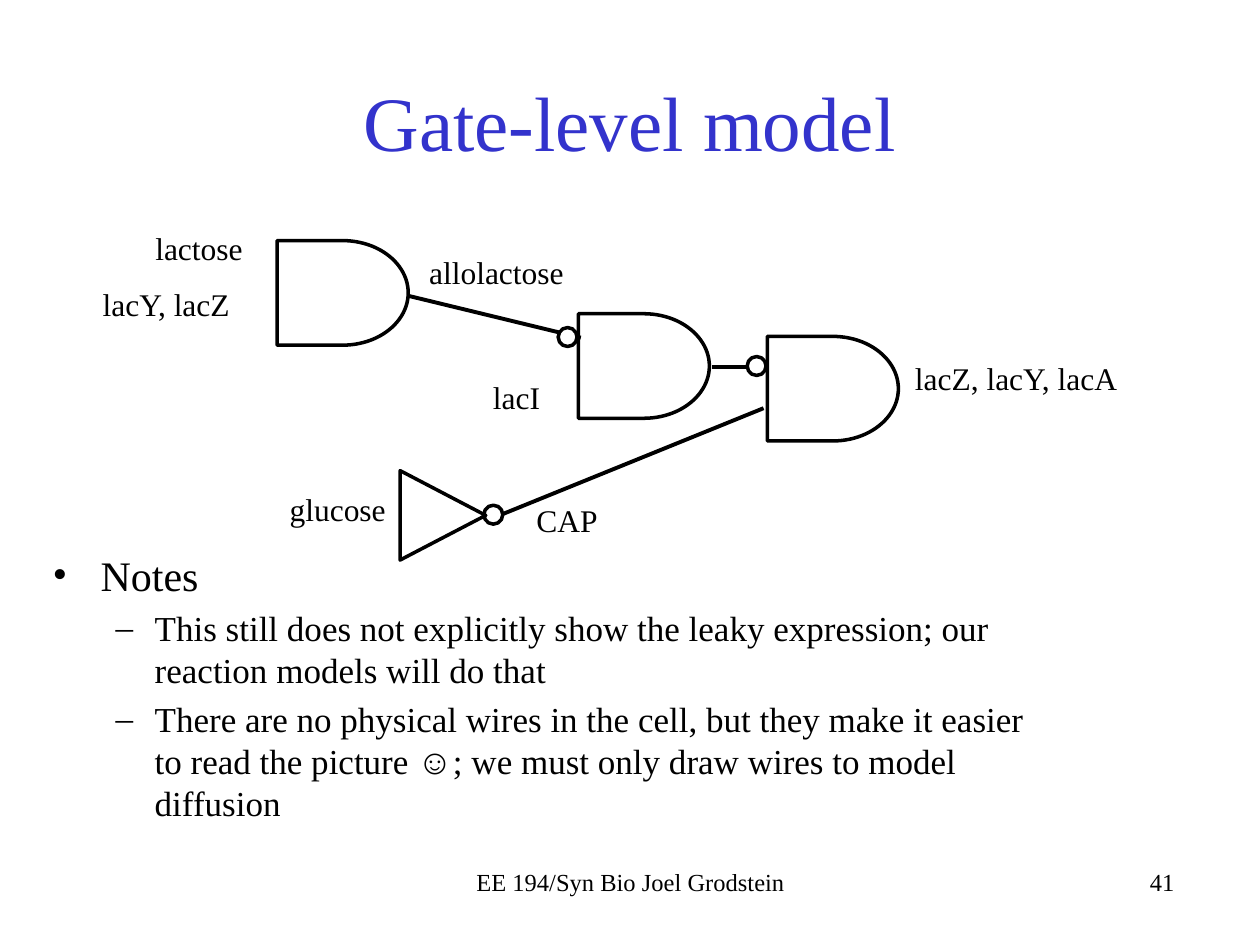
from pptx import Presentation
from pptx.dml.color import RGBColor
from pptx.enum.shapes import MSO_CONNECTOR as CONNECTOR, MSO_SHAPE as SHAPE
from pptx.enum.text import MSO_ANCHOR as ANCHOR, PP_ALIGN as ALIGN
from pptx.oxml.ns import qn
from pptx.util import Inches, Pt
from lxml import etree

FONT = "Times New Roman"
BLACK, WHITE, BLUE = "000000", "FFFFFF", "3333CC"
BUBBLE = 0.15
GATE_WIDTH, GATE_HEIGHT = 1.04, 0.83


def color(hex_string):
    return RGBColor.from_string(hex_string)


def write(paragraph, text, size=18, ink=BLACK, align=ALIGN.CENTER):
    paragraph.alignment = align
    run = paragraph.add_run()
    run.text = text
    run.font.name, run.font.size = FONT, Pt(size)
    run.font.color.rgb = color(ink)


def add_frame(slide, box, anchor=ANCHOR.TOP):
    frame = slide.shapes.add_textbox(*map(Inches, box)).text_frame
    frame.word_wrap = True
    frame.vertical_anchor = anchor
    return frame


def add_text(slide, box, text, anchor=ANCHOR.TOP, **style):
    write(add_frame(slide, box, anchor).paragraphs[0], text, **style)


def add_bullet(paragraph, mark, margin, hanging):
    properties = paragraph._p.get_or_add_pPr()
    properties.set("marL", str(Inches(margin)))
    properties.set("indent", str(-Inches(hanging)))
    etree.SubElement(properties, qn("a:buFont")).set("typeface", FONT)
    etree.SubElement(properties, qn("a:buChar")).set("char", mark)


def add_outline(slide, preset, box, fill=None):
    outline = slide.shapes.add_shape(preset, *map(Inches, box))
    outline.shadow.inherit = False
    if fill:
        outline.fill.solid()
        outline.fill.fore_color.rgb = color(fill)
    else:
        outline.fill.background()
    outline.line.color.rgb = color(BLACK)
    outline.line.width = Pt(2)
    return outline


def add_wire(slide, start, end):
    wire = slide.shapes.add_connector(
        CONNECTOR.STRAIGHT, *map(Inches, (*start, *end)))
    wire.line.color.rgb = color(BLACK)
    wire.line.width = Pt(2.25)
    etree.SubElement(wire._element.spPr, qn("a:effectLst"))


def add_and_gate(slide, left, top, bubble_drop=None):
    """Draw an AND gate; bubble_drop places an inverting bubble on its input side."""
    add_outline(slide, SHAPE.FLOWCHART_DELAY, (left, top, GATE_WIDTH, GATE_HEIGHT))
    if bubble_drop is not None:
        add_outline(slide, SHAPE.OVAL,
                    (left - BUBBLE - 0.01, top + bubble_drop, BUBBLE, BUBBLE), WHITE)


def add_inverter(slide, left, top):
    triangle = add_outline(slide, SHAPE.FLOWCHART_MERGE, (left, top, 0.71, 0.68))
    triangle.rotation = 270
    add_outline(slide, SHAPE.OVAL, (left + 0.68, top + 0.26, BUBBLE, BUBBLE))


def add_circuit(slide, left, top):
    def place(x, y):
        return left + x, top + y

    wires = [((1.05, 0.44), (2.41, 0.77)),
             ((3.45, 1.0), (3.88, 1.0)),
             ((1.79, 2.17), (3.86, 1.33))]
    for start, end in wires:
        add_wire(slide, place(*start), place(*end))

    add_and_gate(slide, *place(0, 0))
    add_and_gate(slide, *place(2.39, 0.58), bubble_drop=0.11)
    add_and_gate(slide, *place(3.89, 0.76), bubble_drop=0.16)
    add_inverter(slide, *place(0.96, 1.84))

    signals = [("lactose", -1.1, -0.14, 0.96),
               ("lacY, lacZ", -1.55, 0.3, 1.34),
               ("allolactose", 0.97, 0.05, 1.54),
               ("lacI", 1.42, 1.04, 0.96),
               ("glucose", -0.03, 1.93, 1.02),
               ("CAP", 1.82, 2.02, 0.96),
               ("lacZ, lacY, lacA", 4.91, 0.89, 1.91)]
    for name, x, y, width in signals:
        add_text(slide, (*place(x, y), width, 0.4), name)


def add_notes_list(slide, box):
    frame = add_frame(slide, box)
    items = [
        (0, "Notes"),
        (1, "This still does not explicitly show the leaky expression; "
            "our reaction models will do that"),
        (1, "There are no physical wires in the cell, but they make it easier "
            "to read the picture ☺; we must only draw wires to model diffusion"),
    ]
    levels = [(24, "•", 0.38, 0.38), (20, "–", 0.81, 0.31)]
    for index, (level, text) in enumerate(items):
        size, mark, margin, hanging = levels[level]
        paragraph = frame.add_paragraph() if index else frame.paragraphs[0]
        paragraph.level = level
        paragraph.space_before = Pt(size * 0.2)
        write(paragraph, text, size=size, align=ALIGN.LEFT)
        add_bullet(paragraph, mark, margin, hanging)


def add_footer(slide, top):
    add_text(slide, (3.42, top, 3.17, 0.5), "EE 194/Syn Bio Joel Grodstein", size=14)
    add_text(slide, (6.25, top, 3.17, 0.5), "41", size=14, align=ALIGN.RIGHT)


def main():
    deck = Presentation()
    deck.slide_width, deck.slide_height = Inches(10), Inches(7.5)
    slide = deck.slides.add_slide(deck.slide_layouts[6])
    add_text(slide, (0.75, 0.33, 8.5, 1.25), "Gate-level model",
             anchor=ANCHOR.MIDDLE, size=44, ink=BLUE)
    add_notes_list(slide, (0.32, 4.31, 8.16, 2.34))
    add_circuit(slide, 2.2, 1.91)
    add_footer(slide, 6.83)
    deck.save("out.pptx")


if __name__ == "__main__":
    main()
